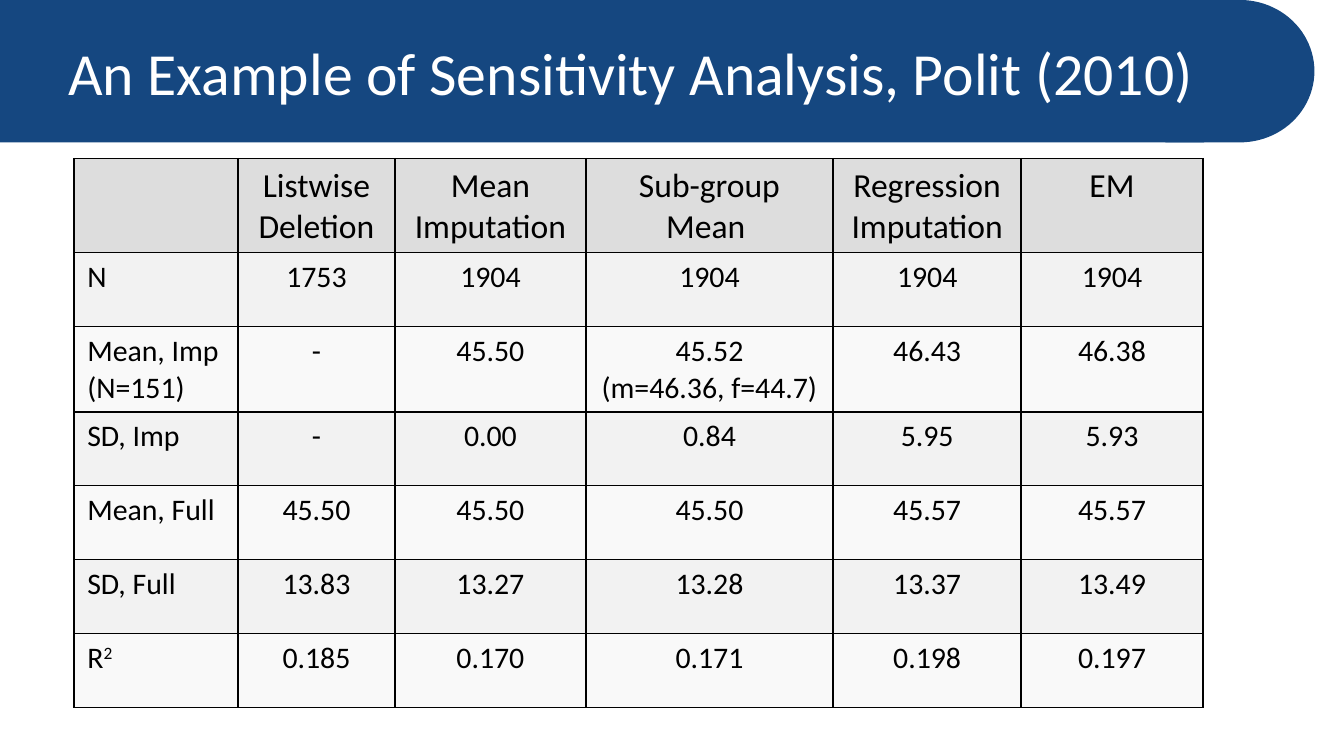
from lxml.etree import SubElement
from pptx import Presentation
from pptx.dml.color import RGBColor
from pptx.enum.shapes import MSO_SHAPE as Shape
from pptx.enum.text import MSO_ANCHOR as Anchor, PP_ALIGN as Align
from pptx.oxml.ns import qn
from pptx.util import Inches, Pt

FONT = "Calibri"
BLUE, WHITE, BLACK = "154780", "FFFFFF", "000000"
HEADER_FILL, BAND_FILLS = "DDDDDD", ("F2F2F2", "F9F9F9")

SLIDE_WIDTH = 10
SLIDE_HEIGHT = SLIDE_WIDTH * 9 / 16
COLUMN_WIDTHS = [1.22, 1.17, 1.42, 1.84, 1.4, 1.35]
ROW_HEIGHTS = [0.29] + [0.55] * 6
RESULTS = [
    ["", "Listwise Deletion", "Mean Imputation", "Sub-group Mean ", "Regression Imputation", "EM"],
    ["N", "1753", "1904", "1904", "1904", "1904"],
    ["Mean, Imp\n(N=151)", "-", "45.50", "45.52\n(m=46.36, f=44.7)", "46.43", "46.38"],
    ["SD, Imp", "-", "0.00", "0.84", "5.95", "5.93"],
    ["Mean, Full", "45.50", "45.50", "45.50", "45.57", "45.57"],
    ["SD, Full", "13.83", "13.27", "13.28", "13.37", "13.49"],
    ["R^2", "0.185", "0.170", "0.171", "0.198", "0.197"],
]


def color(hex_code):
    return RGBColor.from_string(hex_code)


class SlideBuilder:
    """Draws styled elements on the current slide."""

    def __init__(self, slide):
        self.slide = slide

    def block(self, preset, left, top, width, height, fill):
        block = self.slide.shapes.add_shape(
            preset, Inches(left), Inches(top), Inches(width), Inches(height))
        block.shadow.inherit = False
        block.fill.solid()
        block.fill.fore_color.rgb = color(fill)
        block.line.fill.background()

    def run(self, paragraph, text, size, ink, superscript=False):
        run = paragraph.add_run()
        run.text = text
        run.font.name = FONT
        run.font.size = Pt(size)
        run.font.color.rgb = color(ink)
        if superscript:
            run.font._element.set("baseline", "30000")

    def title(self, text, left, top, width, height):
        title = self.slide.shapes.add_textbox(
            Inches(left), Inches(top), Inches(width), Inches(height))
        frame = title.text_frame
        frame.word_wrap = True
        frame.vertical_anchor = Anchor.MIDDLE
        self.run(frame.paragraphs[0], text, 32, WHITE)

    def borders(self, cell):
        properties = cell._tc.get_or_add_tcPr()
        for side in ("a:lnL", "a:lnR", "a:lnT", "a:lnB"):
            edge = SubElement(properties, qn(side), w=str(Pt(1)))
            fill = SubElement(edge, qn("a:solidFill"))
            SubElement(fill, qn("a:srgbClr"), val=BLACK)

    def cell(self, cell, text, size, align, fill):
        self.borders(cell)
        cell.fill.solid()
        cell.fill.fore_color.rgb = color(fill)
        frame = cell.text_frame
        for index, line in enumerate(text.split("\n")):
            paragraph = frame.add_paragraph() if index else frame.paragraphs[0]
            paragraph.alignment = align
            base, _, exponent = line.partition("^")
            if base:
                self.run(paragraph, base, size, BLACK)
            if exponent:
                self.run(paragraph, exponent, size, BLACK, superscript=True)

    def table(self, rows, left, top, height):
        holder = self.slide.shapes.add_table(
            len(rows), len(COLUMN_WIDTHS), Inches(left), Inches(top),
            Inches(sum(COLUMN_WIDTHS)), Inches(height))
        table = holder.table
        for column, width in zip(table.columns, COLUMN_WIDTHS):
            column.width = Inches(width)
        for row, row_height in zip(table.rows, ROW_HEIGHTS):
            row.height = Inches(row_height)
        holder.height = Inches(height)
        for r, row in enumerate(rows):
            size = 16 if r else 18
            fill = BAND_FILLS[(r - 1) % 2] if r else HEADER_FILL
            for c, text in enumerate(row):
                align = Align.CENTER if c else Align.LEFT
                self.cell(table.cell(r, c), text, size, align, fill)


def main():
    deck = Presentation()
    deck.slide_width, deck.slide_height = Inches(SLIDE_WIDTH), Inches(SLIDE_HEIGHT)
    builder = SlideBuilder(deck.slides.add_slide(deck.slide_layouts[6]))
    builder.block(Shape.FLOWCHART_DELAY, 8.67, 0, 1.11, 1.06, BLUE)
    builder.block(Shape.RECTANGLE, 0, 0, 8.96, 1.06, BLUE)
    builder.title("An Example of Sensitivity Analysis, Polit (2010)", 0.41, 0.06, 8.75, 0.94)
    builder.table(RESULTS, 0.55, 1.18, 4.07)
    deck.save("out.pptx")


if __name__ == "__main__":
    main()
